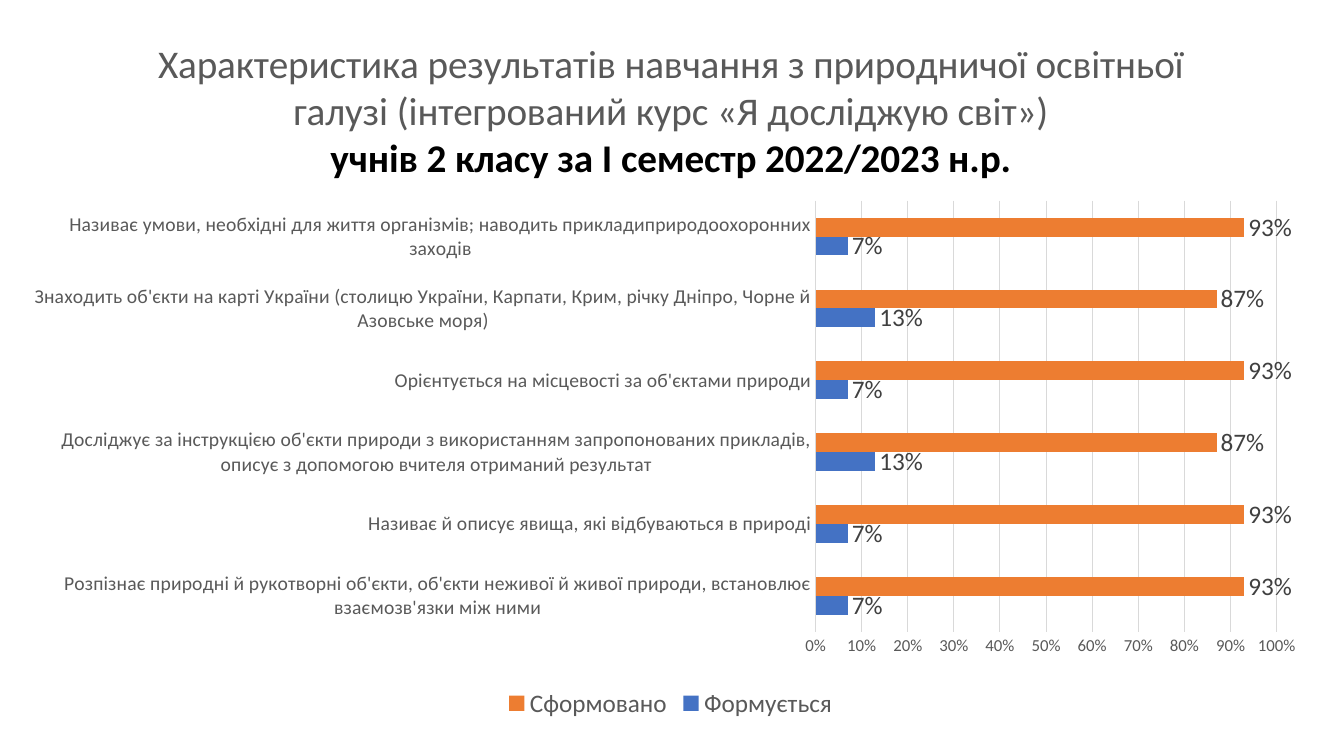
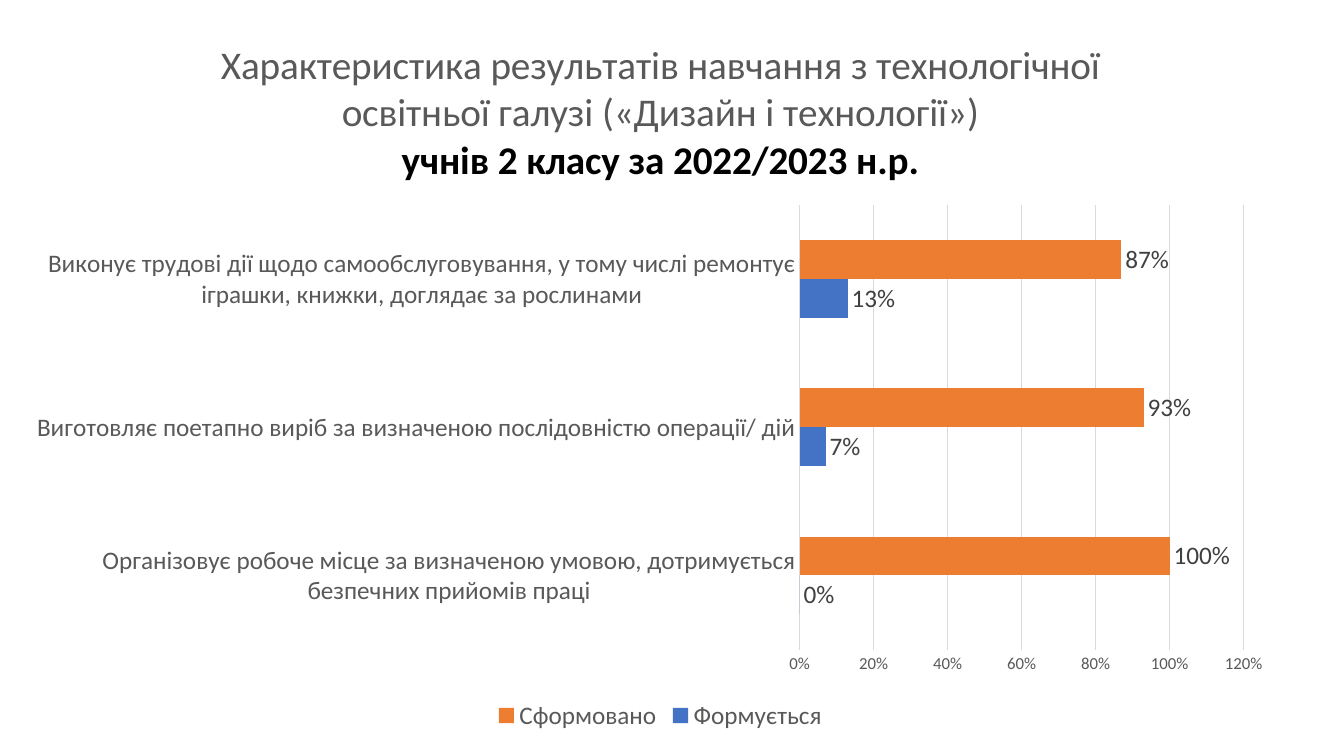
from lxml import etree
from pptx import Presentation
from pptx.chart.data import CategoryChartData
from pptx.dml.color import RGBColor
from pptx.enum.chart import XL_CHART_TYPE, XL_LABEL_POSITION, XL_LEGEND_POSITION, XL_TICK_MARK
from pptx.oxml.ns import qn
from pptx.util import Pt

BAR_CLUSTERED = XL_CHART_TYPE.BAR_CLUSTERED
OUTSIDE_END = XL_LABEL_POSITION.OUTSIDE_END
LEGEND_BOTTOM = XL_LEGEND_POSITION.BOTTOM
NO_TICKS = XL_TICK_MARK.NONE

FONT = "Calibri"
BLACK, GREY, DARK_GREY, LIGHT_GREY = "000000", "595959", "404040", "D9D9D9"
BLUE, ORANGE = "4472C4", "ED7D31"
BLANK_LAYOUT = 6

SCIENCE = {
    "frame": (8.6, 12.2, 941, 504.7),
    "plot": (0.61, 0.26, 0.35, 0.61),
    "title": (
        "Характеристика результатів навчання з природничої освітньої галузі "
        "(інтегрований курс «Я досліджую світ»)",
        "учнів 2 класу за І семестр 2022/2023 н.р.",
    ),
    "category_size": 14,
    "axis_max": 1,
    "axis_step": 0.1,
    "results": [
        ("Розпізнає природні й рукотворні об'єкти, об'єкти неживої й живої природи, "
         "встановлює взаємозв'язки між ними", 0.07, 0.93),
        ("Називає й описує явища, які відбуваються в природі", 0.07, 0.93),
        ("Досліджує за інструкцією об'єкти природи з використанням запропонованих "
         "прикладів, описує з допомогою вчителя отриманий результат", 0.13, 0.87),
        ("Орієнтується на місцевості за об'єктами природи", 0.07, 0.93),
        ("Знаходить об'єкти на карті України (столицю України, Карпати, Крим, "
         "річку Дніпро, Чорне й Азовське моря)", 0.13, 0.87),
        ("Називає умови, необхідні для життя організмів; наводить "
         "прикладиприродоохоронних заходів", 0.07, 0.93),
    ],
}

TECHNOLOGY = {
    "frame": (18.7, 13, 905.8, 512.6),
    "plot": (0.61, 0.26, 0.35, 0.62),
    "title": (
        "Характеристика результатів навчання з технологічної освітньої галузі "
        "(«Дизайн і технології»)",
        "учнів 2 класу за 2022/2023 н.р.",
    ),
    "category_size": 18,
    "axis_max": 1.2,
    "axis_step": 0.2,
    "results": [
        ("Організовує робоче місце за визначеною умовою, дотримується безпечних "
         "прийомів праці", 0, 1),
        ("Виготовляє поетапно виріб за визначеною послідовністю операції/ дій", 0.07, 0.93),
        ("Виконує трудові дії щодо самообслуговування, у тому числі ремонтує "
         "іграшки, книжки, доглядає за рослинами", 0.13, 0.87),
    ],
}


def rgb(value):
    return RGBColor.from_string(value)


def style_font(font, size, color, bold=False):
    font.name = FONT
    font.size = Pt(size)
    font.bold = bold
    font.color.rgb = rgb(color)


def style_line(line):
    line.color.rgb = rgb(LIGHT_GREY)
    line.width = Pt(0.75)


def style_title(chart, lines):
    frame = chart.chart_title.text_frame
    heading, period = frame.paragraphs[0], frame.add_paragraph()
    heading.text, period.text = lines
    style_font(heading.font, 28, GREY)
    style_font(period.font, 28, BLACK, bold=True)


def style_axes(chart, content):
    categories, values = chart.category_axis, chart.value_axis
    for axis, size in ((categories, content["category_size"]), (values, 12)):
        axis.major_tick_mark = axis.minor_tick_mark = NO_TICKS
        style_font(axis.tick_labels.font, size, GREY)
    style_line(categories.format.line)
    values.format.line.fill.background()
    style_line(values.major_gridlines.format.line)
    values.minimum_scale = 0
    values.maximum_scale = content["axis_max"]
    values.major_unit = content["axis_step"]
    values.tick_labels.number_format = "0%"
    values.tick_labels.number_format_is_linked = False


def style_series(series, color):
    series.format.fill.solid()
    series.format.fill.fore_color.rgb = rgb(color)
    labels = series.data_labels
    labels.show_value = True
    labels.position = OUTSIDE_END
    labels.number_format = "0%"
    labels.number_format_is_linked = False
    style_font(labels.font, 18, DARK_GREY)


def place_plot(chart, bounds):
    area = chart.plots[0]._element.getparent()
    for old in area.findall(qn("c:layout")):
        area.remove(old)
    layout = etree.Element(qn("c:layout"))
    area.insert(0, layout)
    manual = etree.SubElement(layout, qn("c:manualLayout"))
    settings = [("layoutTarget", "inner"), ("xMode", "edge"), ("yMode", "edge")]
    for name, value in settings + list(zip("xywh", bounds)):
        etree.SubElement(manual, qn(f"c:{name}")).set("val", str(value))


def add_results_slide(deck, content):
    page = deck.slides.add_slide(deck.slide_layouts[BLANK_LAYOUT])
    names, forming, formed = zip(*content["results"])
    data = CategoryChartData(number_format="0%")
    data.categories = names
    data.add_series("Формується", forming)
    data.add_series("Сформовано", formed)
    bounds = [Pt(length) for length in content["frame"]]
    chart = page.shapes.add_chart(BAR_CLUSTERED, *bounds, data).chart
    style_font(chart.font, 10, BLACK)
    style_title(chart, content["title"])
    style_axes(chart, content)
    plot = chart.plots[0]
    plot.gap_width = 182
    plot.overlap = 0
    plot.vary_by_categories = False
    for series, color in zip(plot.series, (BLUE, ORANGE)):
        style_series(series, color)
    chart.has_legend = True
    chart.legend.position = LEGEND_BOTTOM
    chart.legend.include_in_layout = False
    style_font(chart.legend.font, 18, GREY)
    place_plot(chart, content["plot"])


def main():
    deck = Presentation()
    deck.slide_width, deck.slide_height = Pt(960), Pt(540)
    for content in (SCIENCE, TECHNOLOGY):
        add_results_slide(deck, content)
    deck.save("out.pptx")


if __name__ == "__main__":
    main()
